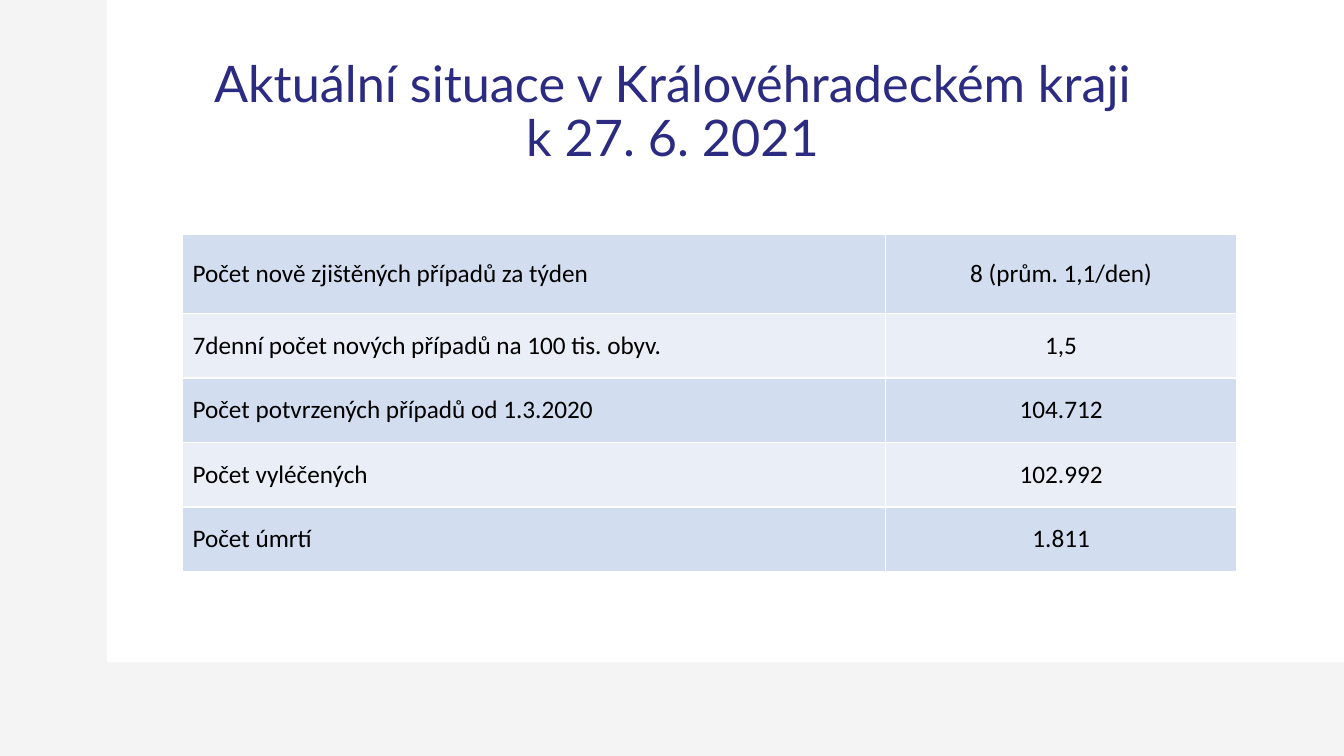
"""Build the slide on the current situation in the region."""
from pptx import Presentation
from pptx.dml.color import RGBColor
from pptx.enum.shapes import MSO_SHAPE
from pptx.enum.text import MSO_ANCHOR, PP_ALIGN
from pptx.util import Inches, Pt

RECT = MSO_SHAPE.RECTANGLE
MIDDLE = MSO_ANCHOR.MIDDLE
LEFT, CENTER = PP_ALIGN.LEFT, PP_ALIGN.CENTER
TITLE_ONLY = 5

ROWS = [
    ("Počet nově zjištěných případů za týden", "8 (prům. 1,1/den)"),
    ("7denní počet nových případů na 100 tis. obyv.", "1,5"),
    ("Počet potvrzených případů od 1.3.2020", "104.712"),
    ("Počet vyléčených", "102.992"),
    ("Počet úmrtí", "1.811"),
]
BANDS = ["D2DEEF", "EAEFF7"]


def paint(fill, color):
    fill.solid()
    fill.fore_color.rgb = RGBColor.from_string(color)


def set_font(p, name, size, color):
    p.font.name = name
    p.font.size = Pt(size)
    paint(p.font.fill, color)


prs = Presentation()
prs.slide_width, prs.slide_height = Inches(13.33), Inches(7.5)
s = prs.slides.add_slide(prs.slide_layouts[TITLE_ONLY])
paint(s.background.fill, "F4F4F4")

panel = s.shapes.add_shape(RECT, Inches(1.06), 0, Inches(12.27), Inches(6.57))
panel.shadow.inherit = False
paint(panel.fill, "FFFFFF")
panel.line.fill.background()

title = s.shapes.title
panel._element.getparent().remove(panel._element)
title._element.addprevious(panel._element)
title.left, title.top = Inches(0.92), Inches(0.4)
title.width, title.height = Inches(11.5), Inches(1.45)
tf = title.text_frame
tf.text = "Aktuální situace v Královéhradeckém kraji\vk 27. 6. 2021"
tf.vertical_anchor = MIDDLE
p = tf.paragraphs[0]
p.alignment = CENTER
p.line_spacing = 0.9
set_font(p, "Lato", 36, "2B2B82")

table = s.shapes.add_table(len(ROWS), 2, Inches(1.81), Inches(2.33),
                           Inches(10.46), Inches(3.34)).table
table.first_row = False
for column, width in zip(table.columns, (6.97, 3.49)):
    column.width = Inches(width)
for i, texts in enumerate(ROWS):
    table.rows[i].height = Inches(0.64 if i else 0.78)
    for j, text in enumerate(texts):
        cell = table.cell(i, j)
        cell.text = text
        cell.vertical_anchor = MIDDLE
        paint(cell.fill, BANDS[i % 2])
        p = cell.text_frame.paragraphs[0]
        p.alignment = CENTER if j else LEFT
        set_font(p, "Calibri", 18, "000000")

prs.save("out.pptx")
